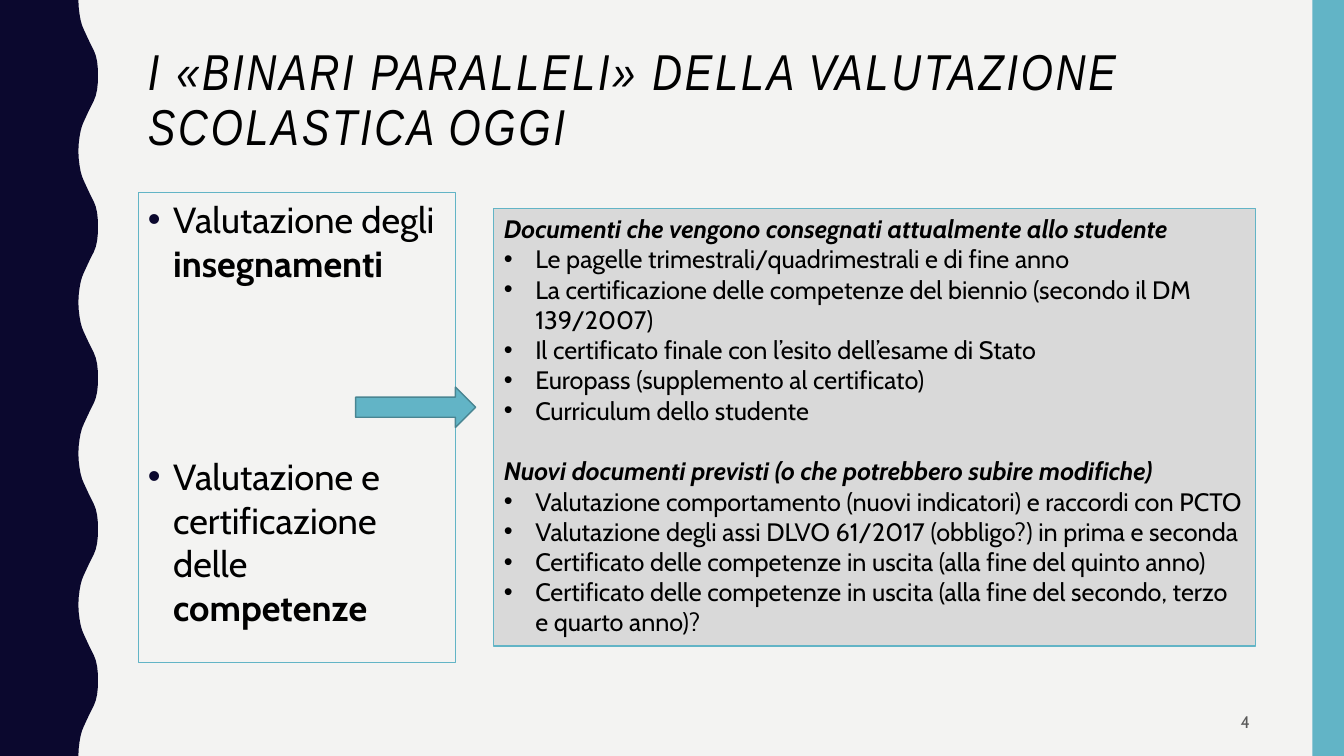
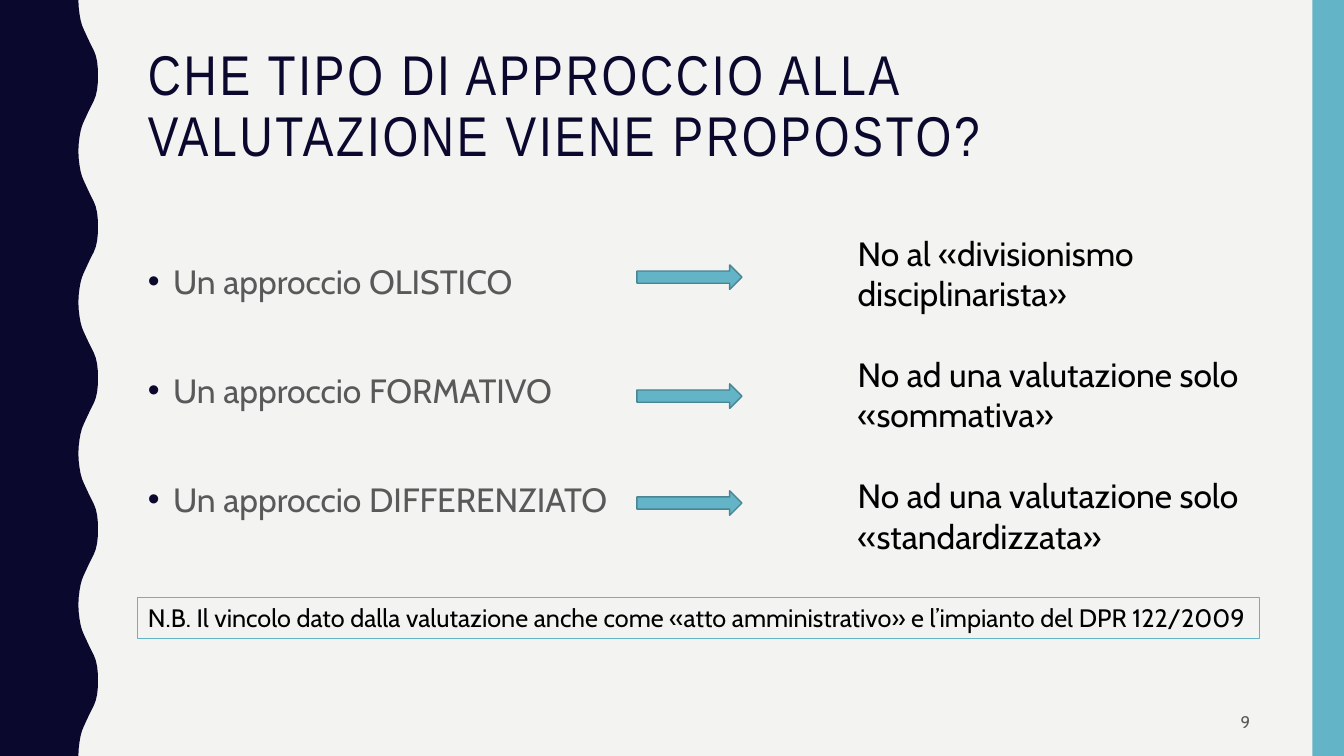
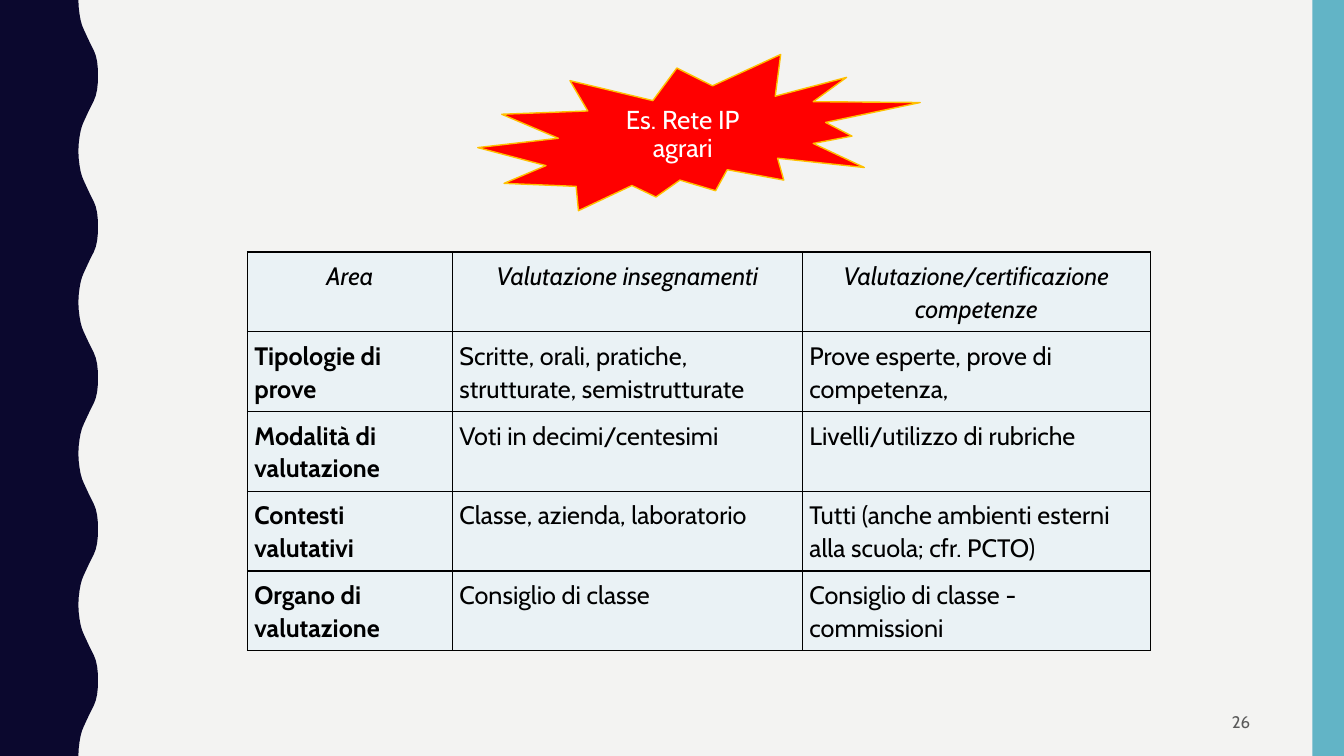
from collections import namedtuple

from lxml import etree
from pptx import Presentation
from pptx.dml.color import RGBColor
from pptx.enum.shapes import MSO_SHAPE
from pptx.enum.text import MSO_ANCHOR, PP_ALIGN
from pptx.oxml.ns import qn
from pptx.util import Pt

NAVY = RGBColor(0x0B, 0x08, 0x2E)
TEAL = RGBColor(0x62, 0xB4, 0xC6)
DARK_TEAL = RGBColor(0x49, 0x85, 0x92)
PAPER = RGBColor(0xF3, 0xF3, 0xF2)
PALE = RGBColor(0xEA, 0xF2, 0xF5)
SILVER = RGBColor(0xD9, 0xD9, 0xD9)
GRAY = RGBColor(0x59, 0x59, 0x59)
BLACK = RGBColor(0, 0, 0)
WHITE = RGBColor(0xFF, 0xFF, 0xFF)
RED = RGBColor(0xFF, 0, 0)
GOLD = RGBColor(0xFF, 0xC0, 0)

RECTANGLE = MSO_SHAPE.RECTANGLE
ARROW = MSO_SHAPE.RIGHT_ARROW
BURST = MSO_SHAPE.EXPLOSION2
LEFT, CENTER, RIGHT = PP_ALIGN.LEFT, PP_ALIGN.CENTER, PP_ALIGN.RIGHT
TOP, MIDDLE = MSO_ANCHOR.TOP, MSO_ANCHOR.MIDDLE

WIDTH, HEIGHT = 960, 540
MARGIN, CONTENT = 98.6, 801.4
WAVE_PERIOD = 108
HALF_WAVE = [(56, 0), (56.2, 5), (56.8, 10), (57.6, 14.4), (58.6, 18), (59.8, 21),
             (61.2, 24), (62.6, 27), (64, 30), (65.5, 33), (67, 36), (68.4, 39.6),
             (69.4, 44), (69.9, 49), (70, 54)]
PLAIN, BOLD, ITALIC = {}, {"bold": True}, {"italic": True}
HEADING = {"bold": True, "italic": True}

Para = namedtuple("Para", "spans before bullet", defaults=(0, False))


def apply(target, formats):
    """Set every attribute named in the formats."""
    for name, value in formats.items():
        setattr(target, name, value)


def plain(text, before=0, bullet=False, font=PLAIN):
    """Return a paragraph made of one span."""
    return Para([(text, font)], before, bullet)


class Deck:
    """Hold the shared style and the current page."""

    def __init__(self):
        """Start an empty deck."""
        self.deck = Presentation()
        apply(self.deck, {"slide_width": Pt(WIDTH), "slide_height": Pt(HEIGHT)})
        self.page = None

    def start_page(self, number):
        """Add a page with its bands and number."""
        self.page = self.deck.slides.add_slide(self.deck.slide_layouts[6])
        fill = self.page.background.fill
        fill.solid()
        fill.fore_color.rgb = PAPER
        self.wave()
        self.shape(RECTANGLE, 937.5, 0, 22.5, HEIGHT, TEAL)
        self.text(678.2, 502, 221.8, 27, [plain(str(number))], 12,
                  color=GRAY, align=RIGHT, anchor=MIDDLE)

    def wave(self):
        """Draw the wavy band on the left."""
        period = HALF_WAVE + [(x, WAVE_PERIOD - y) for x, y in HALF_WAVE[-2::-1]]
        edge = [(x, start + y) for start in range(0, HEIGHT, WAVE_PERIOD)
                for x, y in period]
        builder = self.page.shapes.build_freeform(0, 0, scale=1.0)
        builder.add_line_segments([(Pt(x), Pt(y)) for x, y in edge + [(0, HEIGHT)]])
        self.paint(builder.convert_to_shape(), NAVY)

    def paint(self, shape, fill=None, line=None, weight=0.75):
        """Set the fill, the line and no shadow."""
        shape.shadow.inherit = False
        if fill is None:
            shape.fill.background()
        else:
            shape.fill.solid()
            shape.fill.fore_color.rgb = fill
        if line is None:
            shape.line.fill.background()
        else:
            shape.line.color.rgb = line
            shape.line.width = Pt(weight)

    def shape(self, kind, left, top, width, height, fill=None, line=None, weight=0.75):
        """Add a preset shape."""
        shape = self.page.shapes.add_shape(kind, Pt(left), Pt(top), Pt(width), Pt(height))
        self.paint(shape, fill, line, weight)
        return shape

    def arrow(self, left, top, width, height):
        """Add a block arrow."""
        self.shape(ARROW, left, top, width, height, TEAL, DARK_TEAL, 1)

    def text(self, left, top, width, height, paras, size, **style):
        """Add a plain text box."""
        box = self.page.shapes.add_textbox(Pt(left), Pt(top), Pt(width), Pt(height))
        self.set_text(box.text_frame, paras, size, **style)

    def set_text(self, frame, paras, size, font="Cabin", color=BLACK, align=LEFT,
                 anchor=TOP, spacing=1.0, indent=18, bullet_color=NAVY, tracking=0):
        """Fill a text frame with paragraphs."""
        apply(frame, {"word_wrap": True, "vertical_anchor": anchor})
        for index, content in enumerate(paras):
            para = frame.paragraphs[0] if index == 0 else frame.add_paragraph()
            apply(para, {"alignment": align, "line_spacing": spacing,
                         "space_before": Pt(content.before)})
            if content.bullet:
                self.bullet(para, indent, bullet_color)
            for text, formats in content.spans:
                span = para.add_run()
                span.text = text
                apply(span.font, {"name": font, "size": Pt(size), **formats})
                span.font.color.rgb = color
                if tracking:
                    span._r.get_or_add_rPr().set("spc", str(tracking * 100))

    def bullet(self, para, indent, color):
        """Give a paragraph a round bullet."""
        properties = para._p.get_or_add_pPr()
        properties.set("marL", str(Pt(indent)))
        properties.set("indent", str(-Pt(indent)))
        tint = etree.SubElement(properties, qn("a:buClr"))
        etree.SubElement(tint, qn("a:srgbClr"), val=str(color))
        etree.SubElement(properties, qn("a:buFont"), typeface="Arial")
        etree.SubElement(properties, qn("a:buChar"), char="•")

    def title(self, text, size, height, color=NAVY, font=PLAIN):
        """Add the page title."""
        self.text(MARGIN, 30.2, CONTENT, height, [plain(text, font=font)], size,
                  font="Arial Narrow", color=color, spacing=0.9, tracking=2)

    def table(self, left, top, columns, row_height, rows):
        """Add a ruled table with an italic head and a bold first column."""
        frame = self.page.shapes.add_table(
            len(rows), len(columns), Pt(left), Pt(top),
            Pt(sum(columns)), Pt(row_height * len(rows)))
        table = frame.table
        apply(table, {"first_row": False, "horz_banding": False})
        for column, width in zip(table.columns, columns):
            column.width = Pt(width)
        for row_index, texts in enumerate(rows):
            table.rows[row_index].height = Pt(row_height)
            for column_index, text in enumerate(texts):
                cell = table.cell(row_index, column_index)
                head = row_index == 0
                font = ITALIC if head else BOLD if column_index == 0 else PLAIN
                self.cell(cell, text, font, CENTER if head else LEFT)

    def cell(self, cell, text, font, align):
        """Fill and style one table cell."""
        sides = ("margin_left", "margin_right", "margin_top", "margin_bottom")
        apply(cell, dict.fromkeys(sides, Pt(5)))
        self.set_text(cell.text_frame, [plain(text, font=font)], 18, align=align,
                      spacing=1.07)
        properties = cell._tc.get_or_add_tcPr()
        for side in ("a:lnL", "a:lnR", "a:lnT", "a:lnB"):
            border = etree.SubElement(properties, qn(side), w=str(Pt(1)))
            paint = etree.SubElement(border, qn("a:solidFill"))
            etree.SubElement(paint, qn("a:srgbClr"), val=str(BLACK))
        cell.fill.solid()
        cell.fill.fore_color.rgb = PALE


def tracks_page(deck):
    """Build the page on the parallel tracks."""
    deck.start_page(4)
    deck.title("I «BINARI PARALLELI» DELLA VALUTAZIONE SCOLASTICA OGGI", 36, 78.5,
               BLACK, ITALIC)
    tracks = deck.shape(RECTANGLE, MARGIN, 137.5, 226.8, 335.5, line=TEAL)
    deck.set_text(tracks.text_frame, [
        Para([("Valutazione degli ", PLAIN), ("insegnamenti", BOLD)], 7, True),
        Para([("Valutazione e certificazione delle ", PLAIN), ("competenze", BOLD)],
             121.5, True),
    ], 25.9)
    groups = [
        ("Documenti che vengono consegnati attualmente allo studente", 0, [
            "Le pagelle trimestrali/quadrimestrali e di fine anno",
            "La certificazione delle competenze del biennio (secondo il DM 139/2007)",
            "Il certificato finale con l’esito dell’esame di Stato",
            "Europass (supplemento al certificato)",
            "Curriculum dello studente",
        ]),
        ("Nuovi documenti previsti (o che potrebbero subire modifiche)", 21.7, [
            "Valutazione comportamento (nuovi indicatori) e raccordi con PCTO",
            "Valutazione degli assi DLVO 61/2017 (obbligo?) in prima e seconda",
            "Certificato delle competenze in uscita (alla fine del quinto anno)",
            "Certificato delle competenze in uscita (alla fine del secondo, terzo "
            "e quarto anno)?",
        ]),
    ]
    paras = []
    for heading, before, items in groups:
        paras.append(plain(heading, before, font=HEADING))
        paras.extend(plain(item, bullet=True) for item in items)
    documents = deck.shape(RECTANGLE, 352.8, 149, 543.8, 312.5, SILVER, TEAL)
    deck.set_text(documents.text_frame, paras, 18, indent=22.5, bullet_color=BLACK)
    deck.arrow(254, 276.5, 85.7, 28.8)


def approach_page(deck):
    """Build the page on the proposed approach."""
    deck.start_page(9)
    deck.title("CHE TIPO DI APPROCCIO ALLA VALUTAZIONE VIENE PROPOSTO?", 40, 117.4)
    approaches = ["OLISTICO", "FORMATIVO", "DIFFERENZIATO"]
    deck.text(MARGIN, 180, 370.8, 283, [
        plain(f"Un approccio {name}", 46 if index else 7, True)
        for index, name in enumerate(approaches)
    ], 24, color=GRAY, spacing=1.1)
    refusals = ["No al «divisionismo disciplinarista»",
                "No ad una valutazione solo «sommativa»",
                "No ad una valutazione solo «standardizzata»"]
    deck.text(605.5, 162.7, 294.5, 239.8, [
        plain(refusal, 29 if index else 0) for index, refusal in enumerate(refusals)
    ], 24)
    for top in (189.2, 274.2, 350.6):
        deck.arrow(455, top, 75, 17.5)
    remark = deck.shape(RECTANGLE, MARGIN, 427, CONTENT, 29, line=TEAL)
    deck.set_text(remark.text_frame, [plain(
        "N.B. Il vincolo dato dalla valutazione anche come «atto amministrativo» "
        "e l’impianto del DPR 122/2009")], 18)


def example_page(deck):
    """Build the page with the example table."""
    deck.start_page(26)
    deck.table(176.7, 180, [146.5, 250, 248.5], 57, [
        ["Area", "Valutazione insegnamenti", "Valutazione/certificazione competenze"],
        ["Tipologie di prove", "Scritte, orali, pratiche, strutturate, semistrutturate",
         "Prove esperte, prove di competenza,"],
        ["Modalità di valutazione", "Voti in decimi/centesimi",
         "Livelli/utilizzo di rubriche"],
        ["Contesti valutativi", "Classe, azienda, laboratorio",
         "Tutti (anche ambienti esterni alla scuola; cfr. PCTO)"],
        ["Organo di valutazione", "Consiglio di classe",
         "Consiglio di classe - commissioni"],
    ])
    burst = deck.shape(BURST, 341.3, 38.9, 316, 111.6, RED, GOLD, 1)
    deck.set_text(burst.text_frame, [plain("Es. Rete IP agrari", 7)], 18.5,
                  color=WHITE, align=CENTER, anchor=MIDDLE, spacing=0.9)


def main():
    """Build and save the deck."""
    deck = Deck()
    tracks_page(deck)
    approach_page(deck)
    example_page(deck)
    deck.deck.save("out.pptx")


if __name__ == "__main__":
    main()
